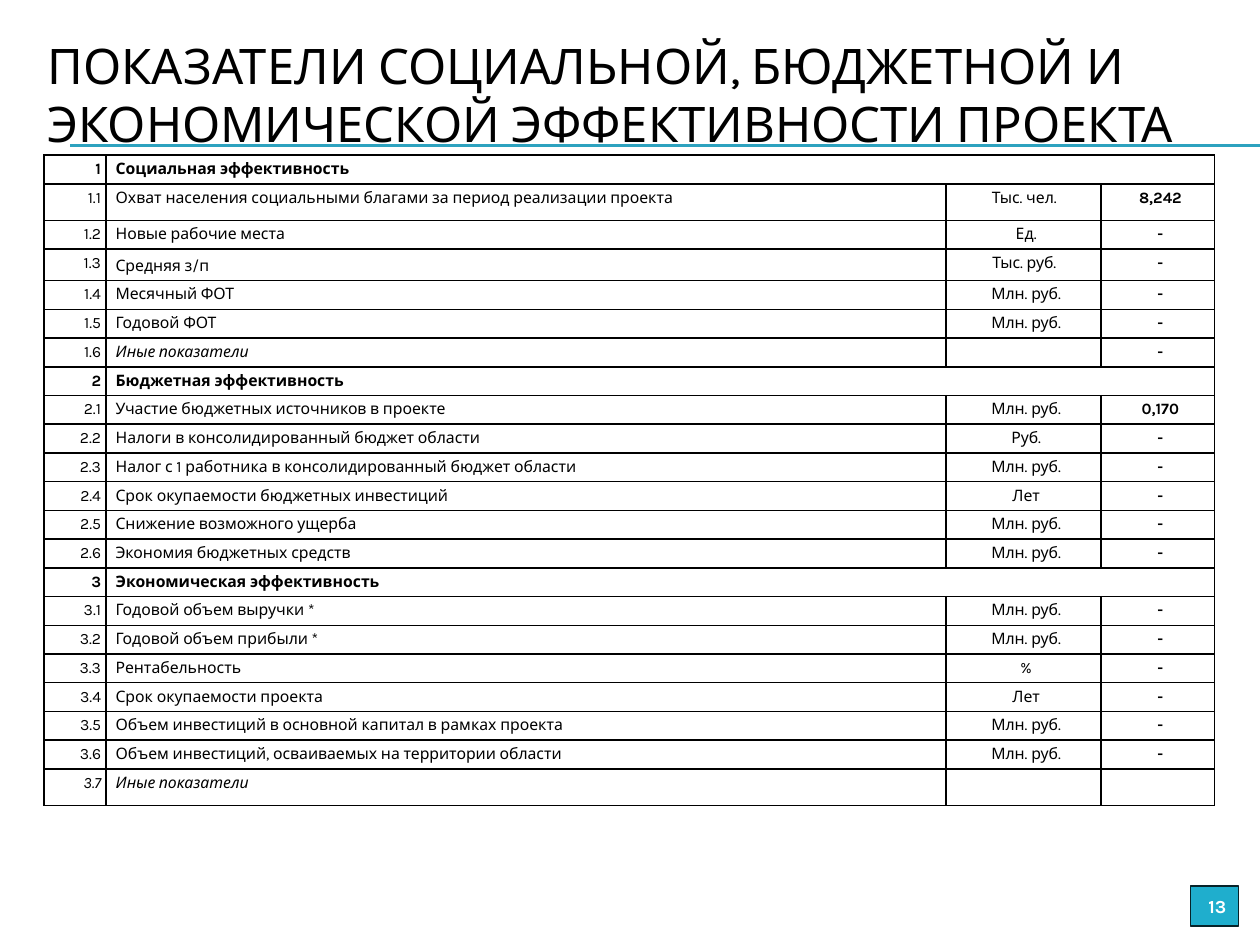
"""Build the slide with the table of project efficiency indicators."""
from lxml.etree import SubElement
from pptx import Presentation
from pptx.dml.color import RGBColor
from pptx.enum.shapes import MSO_CONNECTOR, MSO_SHAPE
from pptx.enum.text import MSO_ANCHOR as ANCHOR, PP_ALIGN as ALIGN
from pptx.oxml.ns import qn
from pptx.util import Pt

TITLE = "ПОКАЗАТЕЛИ СОЦИАЛЬНОЙ, БЮДЖЕТНОЙ И ЭКОНОМИЧЕСКОЙ ЭФФЕКТИВНОСТИ ПРОЕКТА\v"
PAGE = "13"
MLN = "Млн. руб."
OTHER = "Иные показатели"
SECTIONS = [
    ("Социальная эффективность", [
        ("Охват населения социальными благами за период реализации проекта", "Тыс. чел. ", "8,242"),
        ("Новые рабочие места", "Ед.", "-"),
        ("Средняя з/п", "Тыс. руб. ", "-"),
        ("Месячный ФОТ", MLN, "-"),
        ("Годовой ФОТ", MLN, "-"),
        (OTHER, "", "-"),
    ]),
    ("Бюджетная эффективность", [
        ("Участие бюджетных источников в проекте", MLN, "0,170"),
        ("Налоги в консолидированный бюджет области", "Руб.", "-"),
        ("Налог с 1 работника в консолидированный бюджет области", MLN, "-"),
        ("Срок окупаемости бюджетных инвестиций", "Лет", "-"),
        ("Снижение возможного ущерба", MLN, "-"),
        ("Экономия бюджетных средств", MLN, "-"),
    ]),
    ("Экономическая эффективность", [
        ("Годовой объем выручки *", MLN, "-"),
        ("Годовой объем прибыли *", MLN, "-"),
        ("Рентабельность", "%", "-"),
        ("Срок окупаемости проекта", "Лет", "-"),
        ("Объем инвестиций в основной капитал в рамках проекта", MLN, "-"),
        ("Объем инвестиций, осваиваемых на территории области", MLN, "-"),
        (OTHER, "", ""),
    ]),
]
COLORS = {"text": "000000", "rule": "2DA2BF", "badge": "1FAECD", "edge": "062329", "light": "FFFFFF"}
FONT = "Karla"
COLS = [35.3, 480.2, 88.6, 64.8]
ALIGNS = [ALIGN.RIGHT, ALIGN.LEFT, ALIGN.CENTER, ALIGN.CENTER]
ROW_H = 16.2
TALL = {"1.1": 20.9, "1.3": 17.6, "3.7": 20.9}
SPACING = {"Средняя з/п": 1.15}


def rgb(name):
    return RGBColor.from_string(COLORS[name])


def write(tf, text, size=9, color="text", bold=False, italic=False, align=ALIGN.LEFT, spacing=None):
    p = tf.paragraphs[0]
    p.text = text
    p.alignment = align
    p.line_spacing = spacing
    for font in [p.font] + [r.font for r in p.runs]:
        font.name, font.size = FONT, Pt(size)
        font.bold, font.italic = bold, italic
        font.color.rgb = rgb(color)
    if not text:
        SubElement(p._p, qn("a:endParaRPr"), sz=str(size * 100))


def add_borders(cell):
    pr = cell._tc.get_or_add_tcPr()
    for i, side in enumerate(("lnL", "lnR", "lnT", "lnB")):
        ln = pr.makeelement(qn("a:" + side), {"w": str(Pt(1))})
        fill = SubElement(ln, qn("a:solidFill"))
        SubElement(fill, qn("a:srgbClr"), val=COLORS["text"])
        pr.insert(i, ln)


def add_rule(s, y):
    line = s.shapes.add_connector(MSO_CONNECTOR.STRAIGHT, Pt(40.3), Pt(y), Pt(720), Pt(y))
    line.line.color.rgb = rgb("rule")
    line.line.width = Pt(0.75)
    SubElement(line._element.spPr, qn("a:effectLst"))


def add_title(s):
    tf = s.shapes.add_textbox(Pt(20.2), Pt(37.4), Pt(684), Pt(66.2)).text_frame
    tf.word_wrap = True
    tf.vertical_anchor = ANCHOR.MIDDLE
    write(tf, TITLE, size=28)


def add_indicators(s):
    rows = []
    for n, (heading, items) in enumerate(SECTIONS, 1):
        rows.append((str(n), heading))
        rows += [(f"{n}.{k}", *item) for k, item in enumerate(items, 1)]
    heights = [TALL.get(row[0], ROW_H) for row in rows]
    table = s.shapes.add_table(len(rows), len(COLS), Pt(25.2), Pt(88.6),
                               Pt(sum(COLS)), Pt(sum(heights))).table
    table.first_row = table.horz_banding = False
    for col, width in zip(table.columns, COLS):
        col.width = Pt(width)
    for i, row in enumerate(rows):
        table.rows[i].height = Pt(heights[i])
        section = len(row) == 2
        for j in range(len(COLS)):
            cell = table.cell(i, j)
            cell.fill.background()
            cell.margin_left = Pt(5.6)
            cell.margin_right = cell.margin_top = cell.margin_bottom = Pt(2.8)
            add_borders(cell)
            text = row[j] if j < len(row) else ""
            write(cell.text_frame, text, bold=section or j == 3,
                  italic=text in (OTHER, "3.7"), align=ALIGNS[j], spacing=SPACING.get(text))
        if section:
            table.cell(i, 1).merge(table.cell(i, 3))


def add_badge(s):
    sp = s.shapes.add_shape(MSO_SHAPE.RECTANGLE, Pt(680.4), Pt(506.2), Pt(27.4), Pt(23))
    sp.shadow.inherit = False
    sp.fill.solid()
    sp.fill.fore_color.rgb = rgb("badge")
    sp.line.color.rgb = rgb("edge")
    sp.line.width = Pt(0.75)
    sp.text_frame.vertical_anchor = ANCHOR.MIDDLE
    write(sp.text_frame, PAGE, size=10.5, color="light", bold=True, align=ALIGN.RIGHT)


def main():
    prs = Presentation()
    prs.slide_width, prs.slide_height = Pt(720), Pt(540)
    s = prs.slides.add_slide(prs.slide_layouts[6])
    for y in (82.8, 83.5):
        add_rule(s, y)
    add_title(s)
    add_indicators(s)
    add_badge(s)
    prs.save("out.pptx")


if __name__ == "__main__":
    main()
